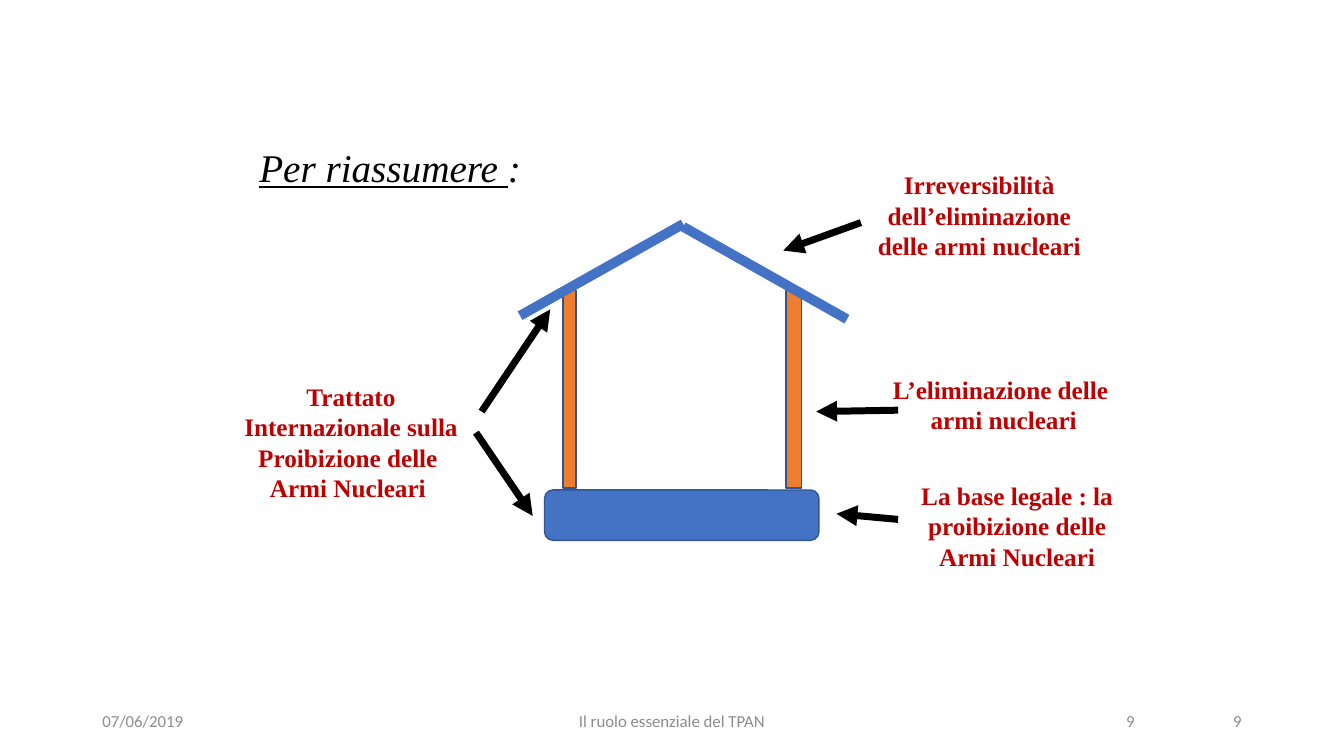
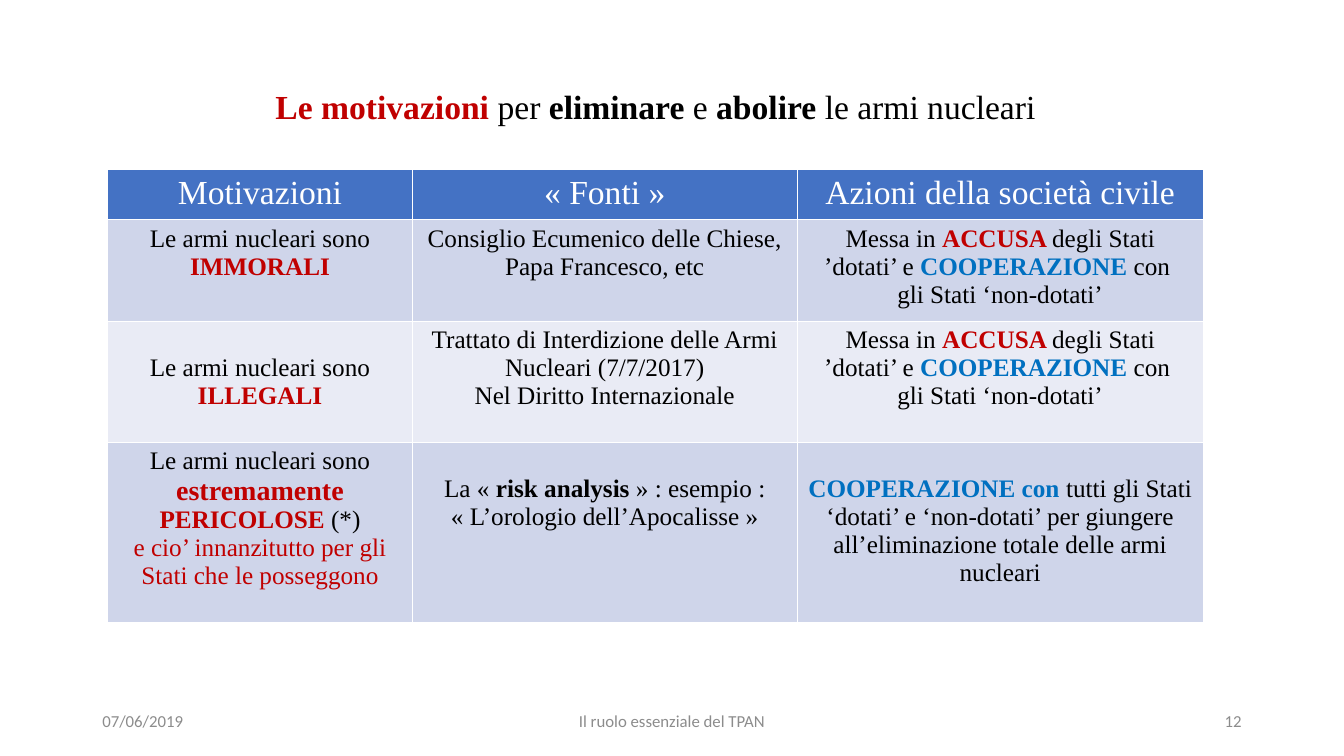
from pptx import Presentation
from pptx.dml.color import RGBColor
from pptx.enum import shapes, text
from pptx.oxml import parse_xml
from pptx.oxml.ns import nsdecls
from pptx.util import Pt

BLACK = RGBColor(0x00, 0x00, 0x00)
WHITE = RGBColor(0xFF, 0xFF, 0xFF)
GREY = RGBColor(0x8C, 0x8C, 0x8C)
RED = RGBColor(0xC0, 0x00, 0x00)
SKY = RGBColor(0x00, 0x70, 0xC0)
BLUE = RGBColor(0x44, 0x72, 0xC4)
NAVY = RGBColor(0x32, 0x54, 0x91)
ORANGE = RGBColor(0xED, 0x7D, 0x31)
BANDS = (RGBColor(0xCF, 0xD5, 0xEA), RGBColor(0xE9, 0xEB, 0xF5))

SERIF, SANS = "Times New Roman", "Calibri"
LEFT, MID, RIGHT = text.PP_ALIGN.LEFT, text.PP_ALIGN.CENTER, text.PP_ALIGN.RIGHT
RECT = shapes.MSO_SHAPE.RECTANGLE
ROUND = shapes.MSO_SHAPE.ROUNDED_RECTANGLE

# Run styles
BOLD = {"bold": True}
PLAIN = {"bold": False}
ALERT = {"bold": True, "color": RED}
CALM = {"bold": True, "color": SKY}


def style(font, color=None, size=None, bold=None, italic=None, underline=None, face=None):
    """Set the font properties that are given."""
    if color is not None:
        font.color.rgb = color
    if size is not None:
        font.size = Pt(size)
    if bold is not None:
        font.bold = bold
    if italic is not None:
        font.italic = italic
    if underline is not None:
        font.underline = underline
    if face is not None:
        font.name = face


class Deck:
    """Holds the shared style and the current slide."""

    def __init__(self):
        self.prs = Presentation()
        self.prs.slide_width, self.prs.slide_height = Pt(960), Pt(540)
        self.slide = None

    def fill_text(self, frame, paras, size, color=BLACK, face=SERIF, align=MID,
                  pitch=None, **props):
        """Fill a frame: a paragraph is a list of strings or (string, style)."""
        for i, runs in enumerate(paras):
            para = frame.paragraphs[0] if i == 0 else frame.add_paragraph()
            para.alignment = align
            if pitch:
                para.line_spacing = Pt(pitch)
            style(para.font, color, size, face=face, **props)
            for item in runs:
                words, extra = (item, {}) if isinstance(item, str) else item
                run = para.add_run()
                run.text = words
                style(run.font, **extra)

    def page(self, number, title, box, size, align=MID, **props):
        """Start a slide with its title and footer."""
        self.slide = self.prs.slides.add_slide(self.prs.slide_layouts[5])
        head = self.slide.shapes.title
        head.left, head.top, head.width, head.height = map(Pt, box)
        frame = head.text_frame
        frame.auto_size = text.MSO_AUTO_SIZE.NONE
        frame.vertical_anchor = text.MSO_ANCHOR.MIDDLE
        self.fill_text(frame, [title], size, align=align, **props)
        self.foot(66, 216, "07/06/2019", LEFT)
        self.foot(318, 324, "Il ruolo essenziale del TPAN", MID)
        self.foot(678, 216, number, RIGHT)

    def label(self, x, y, w, h, paras, size=18, anchor=text.MSO_ANCHOR.TOP, **props):
        frame = self.slide.shapes.add_textbox(Pt(x), Pt(y), Pt(w), Pt(h)).text_frame
        frame.word_wrap = True
        frame.vertical_anchor = anchor
        self.fill_text(frame, paras, size, **props)

    def foot(self, x, w, words, align):
        self.label(x, 500.5, w, 28.8, [[words]], 12, text.MSO_ANCHOR.MIDDLE,
                   color=GREY, face=SANS, align=align)

    def block(self, kind, x, y, w, h, fill):
        shape = self.slide.shapes.add_shape(kind, Pt(x), Pt(y), Pt(w), Pt(h))
        shape.shadow.inherit = False
        shape.fill.solid()
        shape.fill.fore_color.rgb = fill
        shape.line.color.rgb = NAVY
        shape.line.width = Pt(1)

    def line(self, start, end, color=BLACK, width=5, arrow=True):
        link = self.slide.shapes.add_connector(
            shapes.MSO_CONNECTOR.STRAIGHT, *map(Pt, start + end))
        link.line.color.rgb = color
        link.line.width = Pt(width)
        if arrow:
            link.line._get_or_add_ln().append(
                parse_xml(f'<a:tailEnd type="triangle" {nsdecls("a")}/>'))
        link._element.spPr.append(parse_xml(f'<a:effectLst {nsdecls("a")}/>'))

    def table(self, x, y, cols, rows, cells, low):
        """Draw a banded table; cells listed in low start one line down."""
        grid = self.slide.shapes.add_table(
            len(rows), len(cols), Pt(x), Pt(y), Pt(sum(cols)), Pt(sum(rows))).table
        for col, width in zip(grid.columns, cols):
            col.width = Pt(width)
        for r, (height, line) in enumerate(zip(rows, cells)):
            grid.rows[r].height = Pt(height)
            for c, paras in enumerate(line):
                cell = grid.cell(r, c)
                cell.fill.solid()
                cell.fill.fore_color.rgb = BANDS[(r - 1) % 2] if r else BLUE
                if (r, c) in low:
                    cell.margin_top = Pt(23.5)
                self.fill_text(cell.text_frame, paras, 18 if r else 24,
                               BLACK if r else WHITE)


def house(deck):
    deck.page("9", [("Per riassumere ", {"underline": True}), ":"],
              (178, 101, 400, 36), 28, LEFT, italic=True)
    deck.foot(649.5, 168, "9", RIGHT)

    # Base, pillars and roof
    deck.block(ROUND, 389, 350, 196, 36, BLUE)
    deck.block(RECT, 402, 207.5, 9.5, 141, ORANGE)
    deck.block(RECT, 561.5, 207.5, 11, 141, ORANGE)
    deck.line((488, 162), (605, 228), BLUE, 7, False)
    deck.line((371.5, 225.5), (488, 160), BLUE, 7, False)

    # Arrows from the labels to the house
    for start, end in (
        ((340, 309), (380.5, 368.5)),
        ((641.5, 371), (597.5, 367)),
        ((344, 294), (393, 221)),
        ((615, 159), (559.5, 179)),
        ((641.5, 293), (583, 294)),
    ):
        deck.line(start, end)

    # Labels
    for x, y, w, h, paras in (
        (156, 268.5, 189.5, 94.5,
         [["Trattato Internazionale sulla Proibizione delle "], ["Armi Nucleari "]]),
        (649.5, 339, 154, 73, [["La base legale : la proibizione delle Armi Nucleari"]]),
        (630, 263.5, 174, 51, [["L’eliminazione delle "], ["armi nucleari"]]),
        (610, 117.5, 179, 94.5, [["Irreversibilità dell’eliminazione delle armi nucleari"]]),
    ):
        deck.label(x, y, w, h, paras, color=RED, pitch=21.8, bold=True)


def motives(deck):
    deck.page("12", [("Le motivazioni ", ALERT), "per ", ("eliminare", BOLD), " e ",
                     ("abolire ", BOLD), "le armi nucleari"],
              (88.5, 57.5, 759.5, 36), 24)

    arms = ["Le armi nucleari sono"]
    action = [["Messa in ", ("ACCUSA ", ALERT), "degli Stati ’dotati’ e ",
               ("COOPERAZIONE ", CALM), "con "],
              ["gli Stati ‘non-dotati’"]]
    heads = ("Motivazioni", "« Fonti »", "Azioni della società civile")
    cells = [
        [[[(head, PLAIN)]] for head in heads],
        [[arms, [("IMMORALI", ALERT)]],
         [["Consiglio Ecumenico delle Chiese, Papa Francesco, etc"]],
         action],
        [[arms, [("ILLEGALI", ALERT)]],
         [["Trattato di Interdizione delle Armi Nucleari (7/7/2017)"],
          ["Nel Diritto Internazionale"]],
         action],
        [[arms,
          [("estremamente ", {**ALERT, "size": 20}), ("PERICOLOSE ", ALERT), "(*)"],
          [("e cio’ innanzitutto per gli Stati che le posseggono", {"color": RED})]],
         [["La « ", ("risk analysis", BOLD), " » : esempio :"],
          ["« L’orologio dell’Apocalisse »"]],
         [[("COOPERAZIONE con", CALM),
           " tutti gli Stati ‘dotati’ e ‘non-dotati’ per giungere "
           "all’eliminazione totale delle armi nucleari"]]],
    ]
    deck.table(77, 121, (217.5, 275, 290), (36, 72.5, 86.5, 129), cells,
               {(2, 0), (3, 1), (3, 2)})


def main():
    deck = Deck()
    house(deck)
    motives(deck)
    deck.prs.save("out.pptx")


if __name__ == "__main__":
    main()
